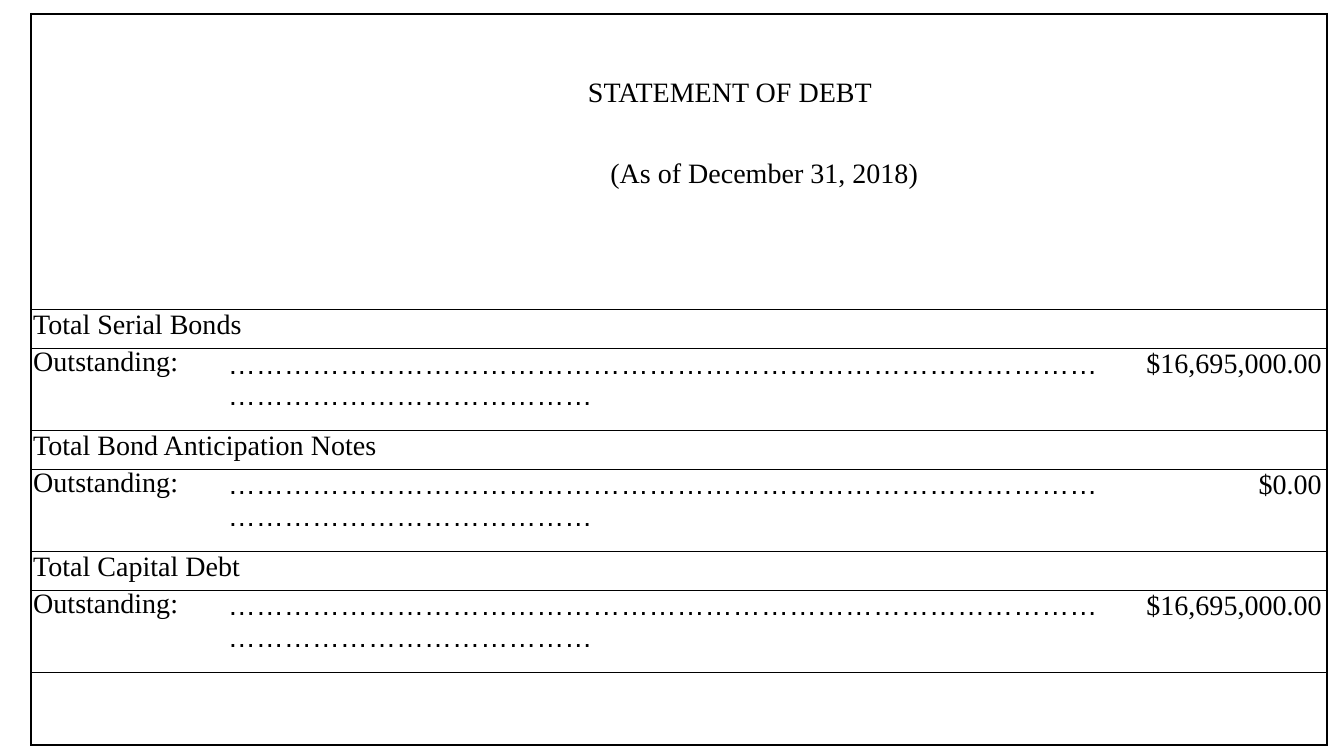
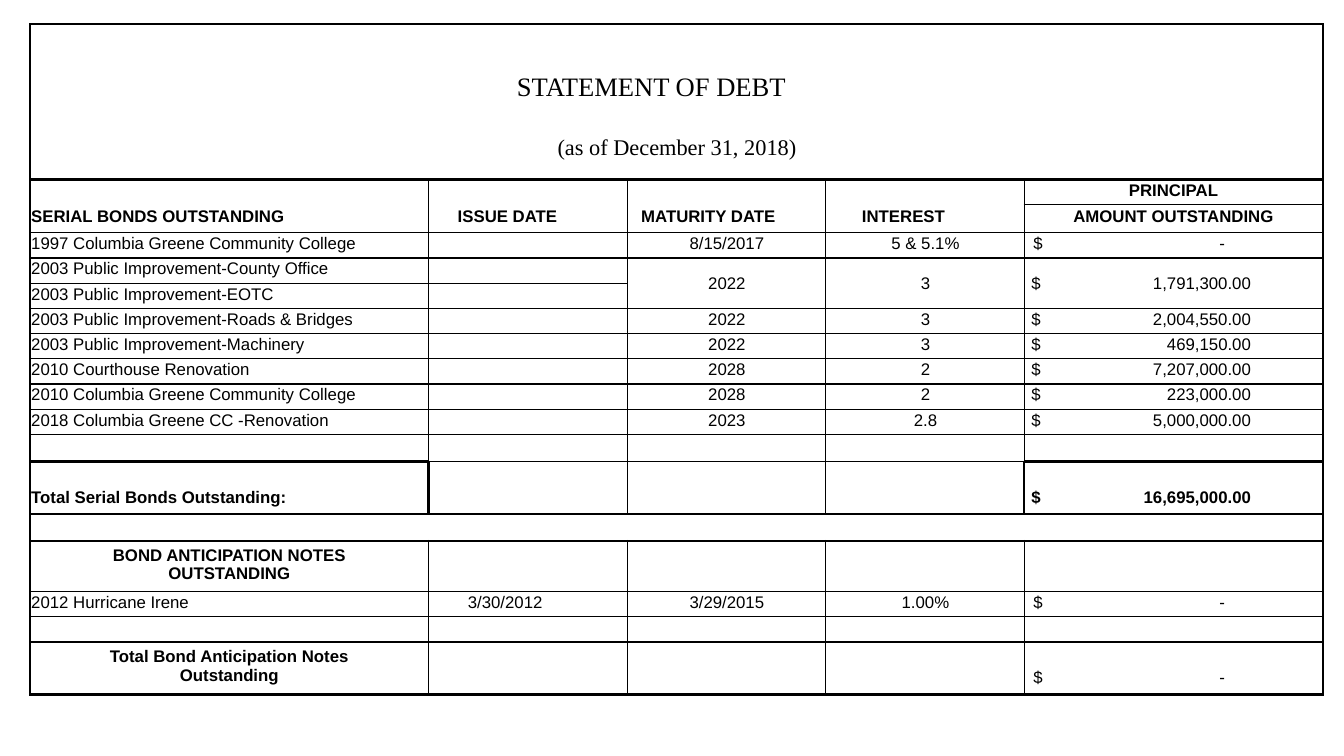
from lxml.etree import SubElement
from pptx import Presentation
from pptx.dml.color import RGBColor
from pptx.enum.text import MSO_ANCHOR, MSO_AUTO_SIZE, PP_ALIGN
from pptx.oxml import parse_xml
from pptx.oxml.ns import nsdecls, qn
from pptx.util import Inches, Pt

COLORS = {"ink": "000000", "paper": "FFFFFF"}
SERIF, SANS = "Times New Roman", "Arial"
THIN, HEAVY = 0.96, 1.92
TITLE = "STATEMENT OF DEBT"
PLAIN_TABLE_STYLE = "{2D5ABB26-0587-4C30-8999-92F81FD0307C}"
LEADER = "…" * 44


# Text
def add_span(para, text, font, size, bold=False):
    span = para.add_run()
    span.text = text
    span.font.name = font
    span.font.size = Pt(size)
    span.font.bold = bold
    span.font.color.rgb = RGBColor.from_string(COLORS["ink"])


def add_title(page, left, top, width, size):
    box = page.shapes.title
    box.left, box.top = Inches(left), Inches(top)
    box.width, box.height = Inches(width), Inches(0.5)
    frame = box.text_frame
    frame.margin_left = frame.margin_right = 0
    frame.margin_top = frame.margin_bottom = 0
    frame.vertical_anchor = MSO_ANCHOR.MIDDLE
    frame.auto_size = MSO_AUTO_SIZE.NONE
    para = frame.paragraphs[0]
    para.alignment = PP_ALIGN.CENTER
    add_span(para, TITLE, SERIF, size)


def write_cell(cell, *lines, font=SANS, size=12, bold=False, align=PP_ALIGN.LEFT,
               left=0, right=0, bottom=0, spacing=None, before=0,
               anchor=MSO_ANCHOR.TOP):
    """Write one paragraph per line; spacing is the first line's height in points."""
    cell.margin_left, cell.margin_right = Inches(left), Inches(right)
    cell.margin_bottom = Inches(bottom)
    cell.vertical_anchor = anchor
    frame = cell.text_frame
    for number, line in enumerate(lines):
        para = frame.add_paragraph() if number else frame.paragraphs[0]
        para.alignment = align
        para.space_before = Pt(before)
        if spacing and number == 0:
            para.line_spacing = Pt(spacing)
        add_span(para, line, font, size, bold)


def add_right_tab(cell, position):
    properties = cell.text_frame.paragraphs[0]._p.get_or_add_pPr()
    stops = SubElement(properties, qn("a:tabLst"))
    SubElement(stops, qn("a:tab"), pos=str(Inches(position)), algn="r")


# Tables
def add_plain_table(page, left, top, widths, heights):
    frame = page.shapes.add_table(
        len(heights), len(widths), Inches(left), Inches(top),
        Inches(sum(widths)), Inches(sum(heights)))
    table = frame.table
    table.first_row = table.horz_banding = False
    table._tbl.tblPr.find(qn("a:tableStyleId")).text = PLAIN_TABLE_STYLE
    for column, width in zip(table.columns, widths):
        column.width = Inches(width)
    for row, height in zip(table.rows, heights):
        row.height = Inches(height)
    for cell in table.iter_cells():
        cell.margin_left = cell.margin_right = 0
        cell.margin_top = cell.margin_bottom = 0
        cell.fill.background()
    return table


def merge(table, row, column, last_row, last_column):
    table.cell(row, column).merge(table.cell(last_row, last_column))


def shrink_empty_cells(table):
    """Keep empty cells from stretching their rows."""
    for cell in table.iter_cells():
        para = cell.text_frame.paragraphs[0]
        if not para.runs:
            SubElement(para._p, qn("a:endParaRPr"), sz="1200")


def draw_borders(table, horizontal, vertical):
    """horizontal(line, column) and vertical(line, row) give widths in points."""
    for row in range(len(table.rows)):
        for column in range(len(table.columns)):
            cell = table.cell(row, column)
            height = cell.span_height if cell.is_merge_origin else 1
            width = cell.span_width if cell.is_merge_origin else 1
            sides = (("L", vertical(column, row)),
                     ("R", vertical(column + width, row)),
                     ("T", horizontal(row, column)),
                     ("B", horizontal(row + height, column)))
            properties = cell._tc.get_or_add_tcPr()
            for position, (side, points) in enumerate(sides):
                paint = (f'<a:solidFill><a:srgbClr val="{COLORS["ink"]}"/></a:solidFill>'
                         if points else "<a:noFill/>")
                properties.insert(position, parse_xml(
                    f'<a:ln{side} {nsdecls("a")} w="{Pt(points)}">{paint}</a:ln{side}>'))


# Slide 1: debt totals
def add_summary_page(deck):
    page = add_page(deck)
    add_title(page, 3.45, 0.66, 7.58, 20)
    totals = [("Total Serial Bonds", "$16,695,000.00"),
              ("Total Bond Anticipation Notes", "$0.00"),
              ("Total Capital Debt", "$16,695,000.00")]
    heights = [1.46, 1.47] + [0.39, 0.81] * len(totals) + [0.72]
    table = add_plain_table(page, 0.31, 0.14, [1.89, 8.83, 2.13], heights)
    serif = {"font": SERIF, "size": 20}
    write_cell(table.cell(1, 1), "(As of December 31, 2018)", **serif,
               align=PP_ALIGN.CENTER, left=1.93, spacing=20.5)
    for number, (label, amount) in enumerate(totals):
        row = 2 + 2 * number
        merge(table, row, 0, row, 2)
        write_cell(table.cell(row, 0), label, **serif, left=0.02, before=1)
        name, leader, value = (table.cell(row + 1, column) for column in range(3))
        write_cell(name, "Outstanding:", **serif, left=0.02, spacing=20.4)
        write_cell(leader, LEADER, size=20, left=0.06, right=0.11, before=9)
        write_cell(value, amount, **serif, align=PP_ALIGN.RIGHT, right=0.05, before=4)
    last = len(heights)
    merge(table, last - 1, 0, last - 1, 2)
    shrink_empty_cells(table)

    def horizontal(line, column):
        if line in (0, last):
            return HEAVY
        return 0 if line == 1 else THIN

    def vertical(line, row):
        return HEAVY if line in (0, 3) else 0

    draw_borders(table, horizontal, vertical)


# Slide 2: debt by issue
def write_amount(cell, amount, **style):
    is_nil = amount == "-"
    write_cell(cell, f"$\t{amount}", left=0.09 if is_nil else 0.07, **style)
    add_right_tab(cell, 1.9 if is_nil else 2.18)


def write_issue(table, row, name, issued, matures, interest, amount):
    body = {"spacing": 11, "anchor": MSO_ANCHOR.MIDDLE}
    write_cell(table.cell(row, 0), name, left=0.01, **body)
    if issued:
        write_cell(table.cell(row, 1), issued, left=0.39, **body)
    if not amount:
        return
    if table.cell(row, 4).is_merge_origin:
        body = {"before": 4.8, "anchor": MSO_ANCHOR.MIDDLE}
    for column, text in ((2, matures), (3, interest)):
        write_cell(table.cell(row, column), text, align=PP_ALIGN.CENTER,
                   left=0.01, **body)
    write_amount(table.cell(row, 4), amount, **body)


def add_detail_page(deck):
    page = add_page(deck)
    add_title(page, 3.21, 0.6, 6.5, 19)
    heights = ([1.06, 0.48, 0.25, 0.28] + [0.25] * 8
               + [0.27, 0.52, 0.27, 0.5, 0.25, 0.25, 0.52])
    table = add_plain_table(page, 0.3, 0.24, [3.95, 1.97, 1.97, 1.97, 2.96], heights)
    for row in (0, 1, 14):
        merge(table, row, 0, row, 4)
    for column in range(4):
        merge(table, 2, column, 3, column)
    for column in (2, 3, 4):
        merge(table, 5, column, 6, column)

    # Headings
    write_cell(table.cell(1, 0), "(as of December 31, 2018)", font=SERIF, size=16,
               align=PP_ALIGN.CENTER, left=0.01, spacing=20.8)
    low = {"bold": True, "anchor": MSO_ANCHOR.BOTTOM, "bottom": 0.07}
    headings = [("SERIAL BONDS OUTSTANDING", 0.01), ("ISSUE DATE", 0.29),
                ("MATURITY DATE", 0.14), ("INTEREST", 0.36)]
    for column, (heading, left) in enumerate(headings):
        write_cell(table.cell(2, column), heading, left=left, **low)
    centered = {"bold": True, "align": PP_ALIGN.CENTER, "spacing": 11,
                "anchor": MSO_ANCHOR.MIDDLE}
    write_cell(table.cell(2, 4), "PRINCIPAL", **centered)
    write_cell(table.cell(3, 4), "AMOUNT OUTSTANDING", **centered)

    # Serial bonds
    bonds = [
        ("1997 Columbia Greene Community College", "", "8/15/2017", "5 & 5.1%", "-"),
        ("2003 Public Improvement-County Office", "", "2022", "3", "1,791,300.00"),
        ("2003 Public Improvement-EOTC", "", "", "", ""),
        ("2003 Public Improvement-Roads & Bridges", "", "2022", "3", "2,004,550.00"),
        ("2003 Public Improvement-Machinery", "", "2022", "3", "469,150.00"),
        ("2010 Courthouse Renovation", "", "2028", "2", "7,207,000.00"),
        ("2010 Columbia Greene Community College", "", "2028", "2", "223,000.00"),
        ("2018 Columbia Greene CC -Renovation", "", "2023", "2.8", "5,000,000.00"),
    ]
    for row, bond in enumerate(bonds, start=4):
        write_issue(table, row, *bond)
    write_cell(table.cell(13, 0), "Total Serial Bonds Outstanding:", left=0.01, **low)
    write_amount(table.cell(13, 4), "16,695,000.00", **low)

    # Bond anticipation notes
    write_cell(table.cell(15, 0), "BOND ANTICIPATION NOTES", "OUTSTANDING", **centered)
    write_issue(table, 16, "2012 Hurricane Irene", "3/30/2012", "3/29/2015", "1.00%", "-")
    write_cell(table.cell(18, 0), "Total Bond Anticipation Notes", "Outstanding",
               **centered)
    write_amount(table.cell(18, 4), "-", **{**low, "bold": False})
    shrink_empty_cells(table)

    def horizontal(line, column):
        if line in (0, 2, 14, 15, len(heights)) or (line == 13 and column in (0, 4)):
            return HEAVY
        merged = (line == 1 or (line == 3 and column < 4)
                  or (line == 6 and column > 1))
        return 0 if merged else THIN

    def vertical(line, row):
        if line in (0, 5) or (row == 13 and line in (1, 4)):
            return HEAVY
        return 0 if row in (0, 1, 14) else THIN

    draw_borders(table, horizontal, vertical)


def add_page(deck):
    page = deck.slides.add_slide(deck.slide_layouts.get_by_name("Title Only"))
    fill = page.background.fill
    fill.solid()
    fill.fore_color.rgb = RGBColor.from_string(COLORS["paper"])
    return page


def main():
    deck = Presentation()
    deck.slide_width, deck.slide_height = Inches(13.33), Inches(7.5)
    add_summary_page(deck)
    add_detail_page(deck)
    deck.save("out.pptx")


if __name__ == "__main__":
    main()
